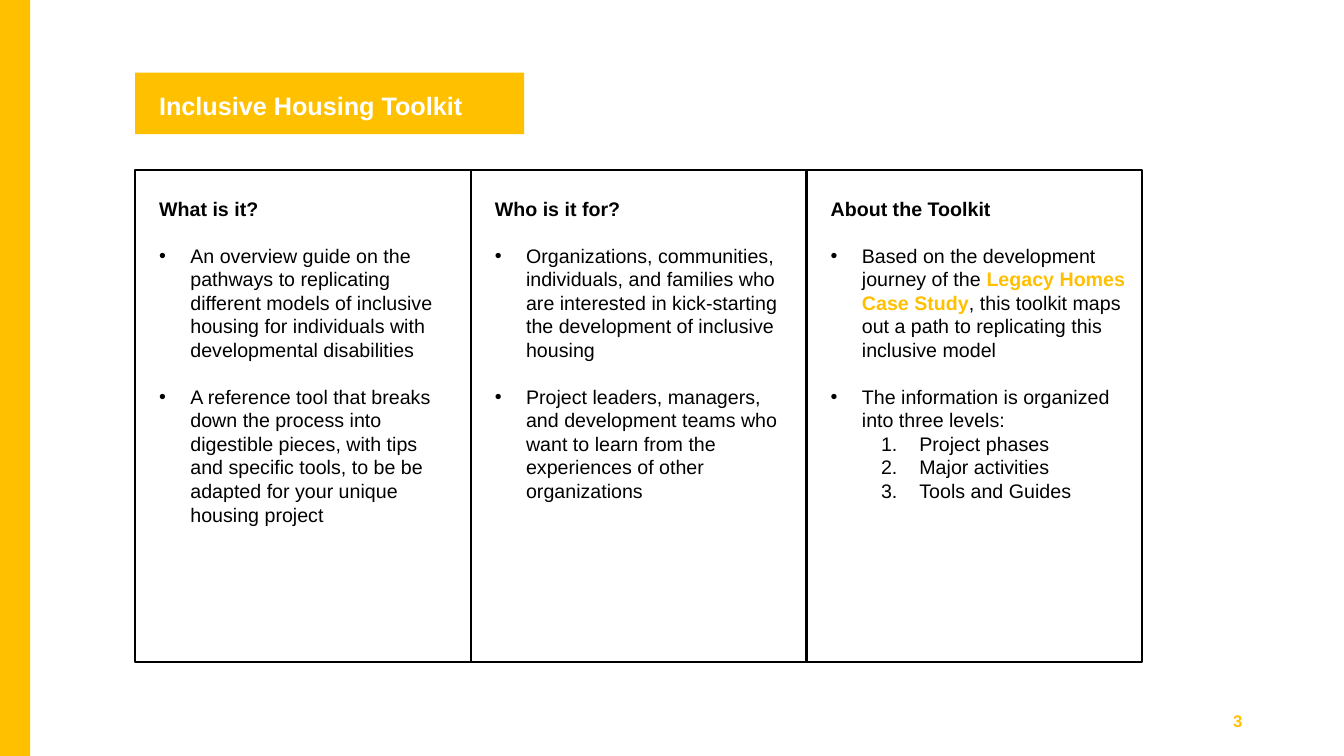
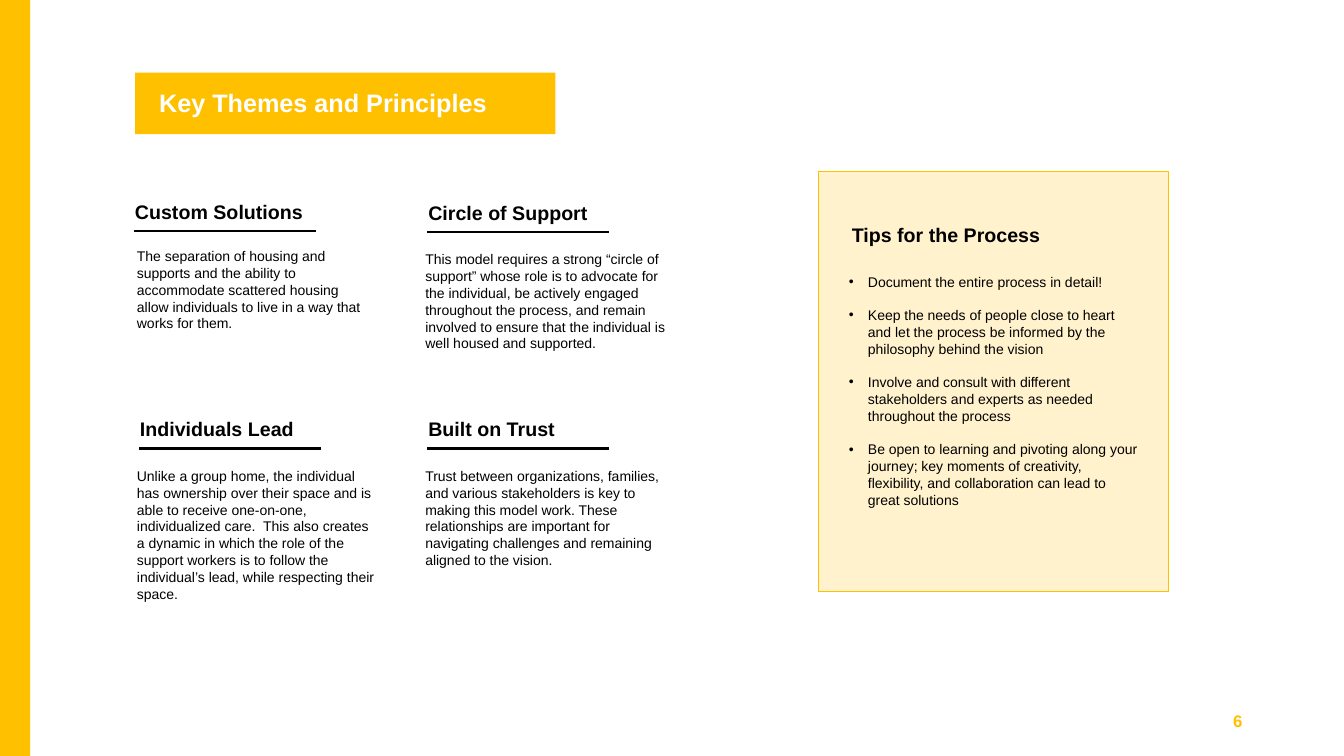
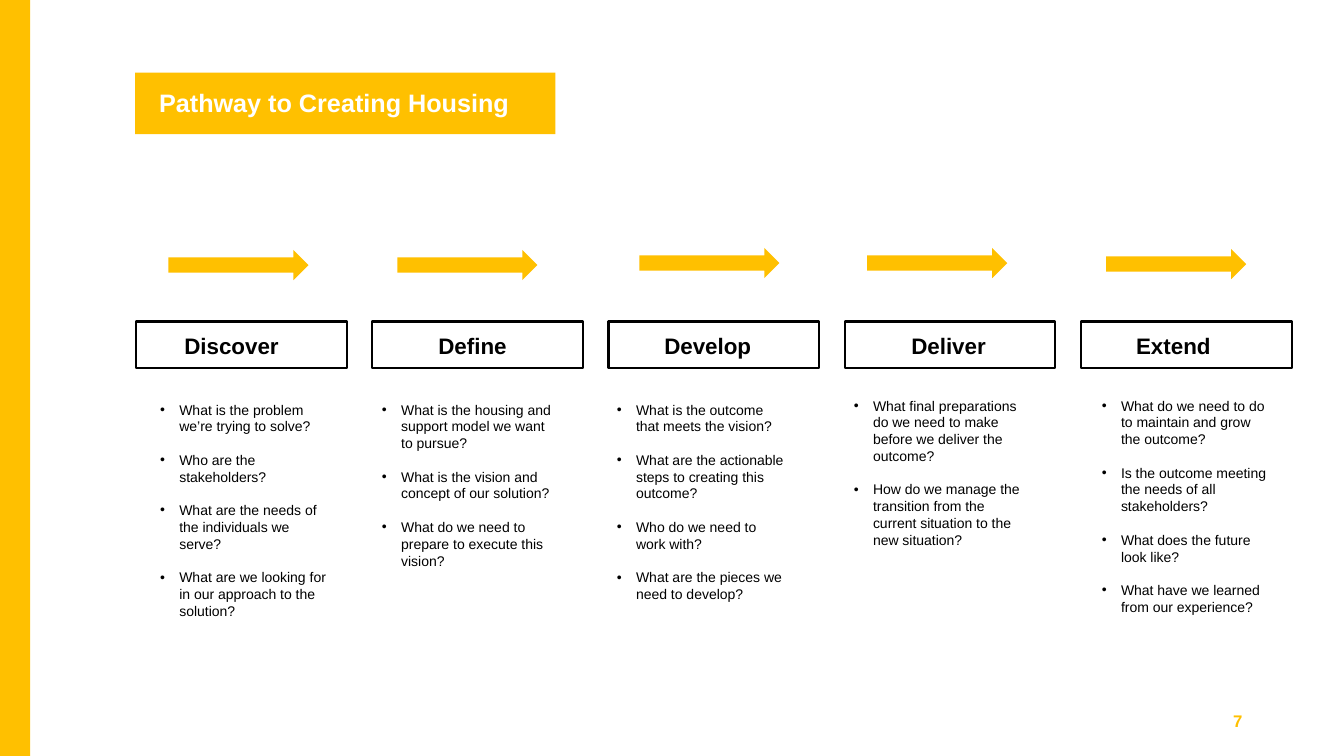
from dataclasses import dataclass
from typing import Optional, Sequence

from lxml.etree import SubElement
from pptx import Presentation
from pptx.dml.color import RGBColor
from pptx.enum.shapes import MSO_CONNECTOR, MSO_SHAPE
from pptx.enum.text import MSO_ANCHOR, PP_ALIGN
from pptx.oxml.ns import qn
from pptx.util import Inches, Pt


@dataclass(frozen=True)
class Theme:
    accent: RGBColor = RGBColor(0xFF, 0xC0, 0x00)
    tint: RGBColor = RGBColor(0xFF, 0xF2, 0xCC)
    ink: RGBColor = RGBColor(0, 0, 0)
    paper: RGBColor = RGBColor(0xFF, 0xFF, 0xFF)
    font: str = "Arial"
    title: int = 18
    stage: int = 16
    heading: int = 14
    number: int = 12
    body: int = 10
    leading: float = 1.2


THEME = Theme()


@dataclass(frozen=True)
class Box:
    left: float
    top: float
    width: float
    height: float

    def emu(self) -> list:
        return [Inches(v) for v in (self.left, self.top, self.width, self.height)]


@dataclass(frozen=True)
class Run:
    text: str
    bold: bool = False
    color: RGBColor = THEME.ink


@dataclass(frozen=True)
class ListStyle:
    margin: float
    hanging: float
    numbered: bool = False
    level: int = 0
    spaced: bool = True


WIDE_BULLET = ListStyle(0.31, 0.31)
BULLET = ListStyle(0.19, 0.19)
NUMBERED = ListStyle(0.88, 0.38, numbered=True, level=1, spaced=False)


@dataclass(frozen=True)
class Para:
    runs: Sequence[Run]
    style: Optional[ListStyle] = None


@dataclass(frozen=True)
class Panel:
    heading: str
    items: Sequence[Para]
    text_width: float


@dataclass(frozen=True)
class Principle:
    heading: str
    heading_at: tuple
    body: str
    body_box: Box


@dataclass(frozen=True)
class Stage:
    name: str
    name_left: float
    arrow_at: tuple
    questions_at: tuple
    questions: Sequence[str]


def item(text: str, style: ListStyle) -> Para:
    return Para([Run(text)], style)


def mark_list(paragraph, style: ListStyle) -> None:
    paragraph.level = style.level
    props = paragraph._p.get_or_add_pPr()
    props.set("marL", str(Inches(style.margin)))
    props.set("indent", str(-Inches(style.hanging)))
    SubElement(props, qn("a:buFont"), typeface=THEME.font)
    if style.numbered:
        SubElement(props, qn("a:buAutoNum"), type="arabicPeriod")
    else:
        SubElement(props, qn("a:buChar"), char="•")


def add_text(slide, box: Box, content, *, size: int = THEME.body,
             color: RGBColor = THEME.ink, bold: bool = False,
             align: PP_ALIGN = PP_ALIGN.LEFT,
             anchor: MSO_ANCHOR = MSO_ANCHOR.TOP) -> None:
    """Write a string, or a list of Para, at the given place."""
    paras = [Para([Run(content, bold, color)])] if isinstance(content, str) else content
    frame = slide.shapes.add_textbox(*box.emu()).text_frame
    frame.word_wrap = True
    frame.vertical_anchor = anchor
    line = Pt(size * THEME.leading)
    for index, para in enumerate(paras):
        paragraph = frame.paragraphs[0] if index == 0 else frame.add_paragraph()
        if para.style:
            mark_list(paragraph, para.style)
        paragraph.alignment = align
        paragraph.line_spacing = line
        if index and para.style and para.style.spaced:
            paragraph.space_before = line
        for part in para.runs:
            run = paragraph.add_run()
            run.text = part.text
            run.font.name = THEME.font
            run.font.size = Pt(size)
            run.font.bold = part.bold
            run.font.color.rgb = part.color


def add_block(slide, box: Box, fill: Optional[RGBColor] = None,
              line: Optional[RGBColor] = None, weight: float = 1.5,
              kind: MSO_SHAPE = MSO_SHAPE.RECTANGLE) -> None:
    block = slide.shapes.add_shape(kind, *box.emu())
    block.shadow.inherit = False
    if fill is None:
        block.fill.background()
    else:
        block.fill.solid()
        block.fill.fore_color.rgb = fill
    if line is None:
        block.line.fill.background()
    else:
        block.line.color.rgb = line
        block.line.width = Pt(weight)


def add_rule(slide, left: float, top: float, length: float) -> None:
    rule = slide.shapes.add_connector(MSO_CONNECTOR.STRAIGHT, Inches(left), Inches(top),
                                      Inches(left + length), Inches(top))
    rule.line.color.rgb = THEME.ink
    rule.line.width = Pt(1.75)
    SubElement(rule._element.spPr, qn("a:effectLst"))


def add_page(deck, title: str, number: int, band_width: float = 4.17,
             title_top: float = 0.82):
    """Add a slide with the side band, title band and page number."""
    slide = deck.slides.add_slide(deck.slide_layouts[6])
    add_block(slide, Box(-0.03, 0, 0.33, 7.5), THEME.accent)
    add_block(slide, Box(1.34, 0.72, band_width, 0.61), THEME.accent)
    add_text(slide, Box(1.48, title_top, 4.46, 0.4), title,
             size=THEME.title, color=THEME.paper, bold=True)
    add_text(slide, Box(9.42, 6.95, 3, 0.4), str(number), size=THEME.number,
             color=THEME.accent, bold=True, align=PP_ALIGN.RIGHT,
             anchor=MSO_ANCHOR.MIDDLE)
    return slide


PANELS = [
    Panel("What is it?", [
        item("An overview guide on the pathways to replicating different models of "
             "inclusive housing for individuals with developmental disabilities", WIDE_BULLET),
        item("A reference tool that breaks down the process into digestible pieces, with "
             "tips and specific tools, to be be adapted for your unique housing project",
             WIDE_BULLET),
    ], 2.99),
    Panel("Who is it for?", [
        item("Organizations, communities, individuals, and families who are interested in "
             "kick-starting the development of inclusive housing", WIDE_BULLET),
        item("Project leaders, managers, and development teams who want to learn from the "
             "experiences of other organizations", WIDE_BULLET),
    ], 3),
    Panel("About the Toolkit", [
        Para([Run("Based on the development journey of the "),
              Run("Legacy Homes Case Study", True, THEME.accent),
              Run(", this toolkit maps out a path to replicating this inclusive model")],
             WIDE_BULLET),
        item("The information is organized into three levels:", WIDE_BULLET),
        item("Project phases", NUMBERED),
        item("Major activities", NUMBERED),
        item("Tools and Guides", NUMBERED),
    ], 3.19),
]

PRINCIPLES = [
    Principle("Custom Solutions", (1.24, 1.93),
              "The separation of housing and supports and the ability to accommodate "
              "scattered housing allow individuals to live in a way that works for them.",
              Box(1.26, 2.41, 2.45, 0.94)),
    Principle("Circle of Support", (4.15, 1.94),
              "This model requires a strong “circle of support” whose role is to advocate "
              "for the individual, be actively engaged throughout the process, and remain "
              "involved to ensure that the individual is well housed and supported.",
              Box(4.12, 2.44, 2.72, 1.28)),
    Principle("Individuals Lead", (1.29, 4.09),
              "Unlike a group home, the individual has ownership over their space and is "
              "able to receive one-on-one, individualized care.  This also creates a dynamic "
              "in which the role of the support workers is to follow the individual’s lead, "
              "while respecting their space.",
              Box(1.26, 4.59, 2.57, 1.45)),
    Principle("Built on Trust", (4.15, 4.09),
              "Trust between organizations, families, and various stakeholders is key to "
              "making this model work. These relationships are important for navigating "
              "challenges and remaining aligned to the vision.",
              Box(4.12, 4.59, 2.53, 1.11)),
]

TIPS = [
    "Document the entire process in detail!",
    "Keep the needs of people close to heart and let the process be informed by the "
    "philosophy behind the vision",
    "Involve and consult with different stakeholders and experts as needed throughout "
    "the process",
    "Be open to learning and pivoting along your journey; key moments of creativity, "
    "flexibility, and collaboration can lead to great solutions",
]

STAGES = [
    Stage("Discover", 1.73, (1.67, 2.48), (1.49, 3.93), [
        "What is the problem we’re trying to solve?",
        "Who are the stakeholders?",
        "What are the needs of the individuals we serve?",
        "What are we looking for in our approach to the solution?"]),
    Stage("Define", 4.25, (3.94, 2.48), (3.69, 3.93), [
        "What is the housing and support model we want to pursue?",
        "What is the vision and concept of our solution?",
        "What do we need to prepare to execute this vision?"]),
    Stage("Develop", 6.49, (6.34, 2.46), (6.02, 3.93), [
        "What is the outcome that meets the vision?",
        "What are the actionable steps to creating this outcome?",
        "Who do we need to work with?",
        "What are the pieces we need to develop?"]),
    Stage("Deliver", 8.94, (8.6, 2.46), (8.37, 3.89), [
        "What final preparations do we need to make before we deliver the outcome?",
        "How do we manage the transition from the current situation to the new situation?"]),
    Stage("Extend", 11.17, (10.97, 2.47), (10.83, 3.89), [
        "What do we need to do to maintain and grow the outcome?",
        "Is the outcome meeting the needs of all stakeholders?",
        "What does the future look like?",
        "What have we learned from our experience?"]),
]


def build_toolkit(deck) -> None:
    slide = add_page(deck, "Inclusive Housing Toolkit", 3, band_width=3.86, title_top=0.85)
    panel_width = 3.33
    for index, panel in enumerate(PANELS):
        left = 1.34 + index * panel_width
        add_block(slide, Box(left, 1.69, panel_width, 4.88), THEME.paper, THEME.ink)
        heading = Para([Run(panel.heading, True)])
        add_text(slide, Box(left + 0.14, 1.9, panel.text_width, 4.58),
                 [heading, *panel.items], size=THEME.heading)


def build_themes(deck) -> None:
    slide = add_page(deck, "Key Themes and Principles", 6)
    add_block(slide, Box(8.12, 1.7, 3.47, 4.17), THEME.tint, THEME.accent, weight=1)
    add_text(slide, Box(8.35, 2.16, 3.06, 0.34), "Tips for the Process",
             size=THEME.heading, bold=True)
    add_text(slide, Box(8.32, 2.66, 3.09, 2.46), [item(tip, BULLET) for tip in TIPS])
    for principle in PRINCIPLES:
        left, top = principle.heading_at
        add_text(slide, Box(left, top, 2, 0.34), principle.heading,
                 size=THEME.heading, bold=True)
        add_rule(slide, left + 0.09, top + 0.36, 1.8)
        add_text(slide, principle.body_box, principle.body)


def build_pathway(deck) -> None:
    slide = add_page(deck, "Pathway to Creating Housing", 7)
    first_left, last_left = 1.35, 10.72
    pitch = (last_left - first_left) / (len(STAGES) - 1)
    for index, stage in enumerate(STAGES):
        add_block(slide, Box(*stage.arrow_at, 1.39, 0.3), THEME.accent,
                  kind=MSO_SHAPE.RIGHT_ARROW)
        add_block(slide, Box(first_left + index * pitch, 3.19, 2.09, 0.46), line=THEME.ink)
        add_text(slide, Box(stage.name_left, 3.25, 1.27, 0.37), stage.name,
                 size=THEME.stage, bold=True)
        add_text(slide, Box(*stage.questions_at, 1.88, 2.46),
                 [item(question, BULLET) for question in stage.questions])


def main() -> None:
    deck = Presentation()
    deck.slide_width, deck.slide_height = Inches(13.33), Inches(7.5)
    build_toolkit(deck)
    build_themes(deck)
    build_pathway(deck)
    deck.save("out.pptx")


if __name__ == "__main__":
    main()
